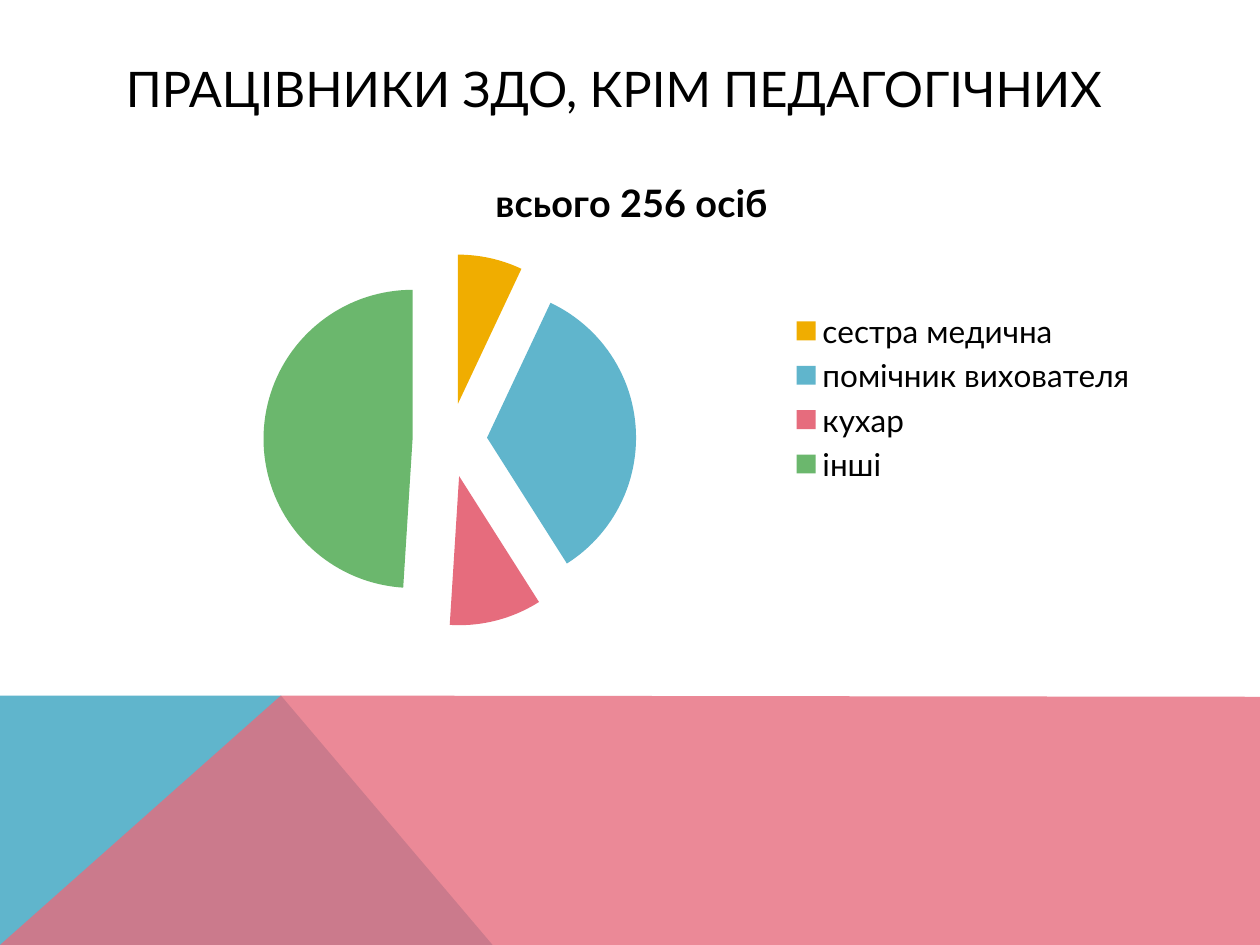
from dataclasses import dataclass

from lxml import etree
from pptx import Presentation
from pptx.chart.data import CategoryChartData
from pptx.dml.color import RGBColor
from pptx.enum.chart import XL_CHART_TYPE as ChartType, XL_LEGEND_POSITION as LegendPosition
from pptx.enum.text import MSO_ANCHOR as Anchor, PP_ALIGN as Align
from pptx.oxml.ns import qn
from pptx.util import Inches, Pt

FONT = "Lato"
BLACK = RGBColor(0x00, 0x00, 0x00)
AMBER = RGBColor(0xF0, 0xAD, 0x00)
BLUE = RGBColor(0x60, 0xB5, 0xCC)
ROSE = RGBColor(0xE6, 0x6C, 0x7D)
GREEN = RGBColor(0x6B, 0xB7, 0x6D)

WIDTH, HEIGHT = 10, 7.5
BAND_TOP, PEAK = 5.52, 2.23
EXPLOSION = 25


@dataclass(frozen=True)
class Band:
    points: tuple[tuple[float, float], ...]
    color: RGBColor
    opacity: int = 100


@dataclass(frozen=True)
class Slice:
    label: str
    value: int
    color: RGBColor


BANDS = (
    Band(((0, HEIGHT), (0, BAND_TOP), (PEAK, BAND_TOP), (3.91, HEIGHT)), BLUE),
    Band(((0, HEIGHT), (PEAK, BAND_TOP), (WIDTH, 5.53), (WIDTH, HEIGHT)), ROSE, 80),
)
SLICES = (
    Slice("сестра медична", 7, AMBER),
    Slice("помічник вихователя", 34, BLUE),
    Slice("кухар", 10, ROSE),
    Slice("інші", 49, GREEN),
)


def draw_band(slide, band: Band) -> None:
    start, *rest = [(Inches(x), Inches(y)) for x, y in band.points]
    builder = slide.shapes.build_freeform(*start)
    builder.add_line_segments(rest, close=True)
    shape = builder.convert_to_shape()
    shape.shadow.inherit = False
    shape.line.fill.background()
    shape.fill.solid()
    shape.fill.fore_color.rgb = band.color
    if band.opacity < 100:
        color = shape.fill._xPr.find(f".//{qn('a:srgbClr')}")
        etree.SubElement(color, qn("a:alpha"), val=str(band.opacity * 1000))


def style_font(font, size: float, bold: bool = False) -> None:
    font.name, font.size, font.bold = FONT, Pt(size), bold
    font.color.rgb = BLACK


def write_text(frame, text: str, *, size: float, bold: bool = False,
               align: Align = Align.LEFT) -> None:
    paragraph = frame.paragraphs[0]
    paragraph.alignment = align
    run = paragraph.add_run()
    run.text = text
    style_font(run.font, size, bold)


def draw_title(slide, text: str) -> None:
    box = slide.shapes.add_textbox(Inches(0.9), Inches(0.4), Inches(8.22), Inches(0.6))
    frame = box.text_frame
    frame.word_wrap = True
    frame.vertical_anchor = Anchor.MIDDLE
    write_text(frame, text, size=28)


def draw_pie(slide, title: str, slices: tuple[Slice, ...]) -> None:
    data = CategoryChartData()
    data.categories = [item.label for item in slices]
    data.add_series(title, [item.value for item in slices])
    chart = slide.shapes.add_chart(
        ChartType.PIE, Inches(0.9), Inches(1.2), Inches(8.23), Inches(3.91), data
    ).chart
    style_font(chart.font, 18)

    chart.has_title = True
    write_text(chart.chart_title.text_frame, title, size=21.6, bold=True, align=Align.CENTER)
    chart.chart_title.include_in_layout = False
    chart.has_legend = True
    chart.legend.position = LegendPosition.RIGHT
    chart.legend.include_in_layout = False
    style_font(chart.legend.font, 18)

    # Slice colours and the gap between slices
    plot = chart.plots[0]
    plot.vary_by_categories = True
    series = plot.series[0]
    for index, item in enumerate(slices):
        fill = series.points[index].format.fill
        fill.solid()
        fill.fore_color.rgb = item.color
    for point in series._element.findall(qn("c:dPt")):
        explosion = etree.Element(qn("c:explosion"), val=str(EXPLOSION))
        point.find(qn("c:spPr")).addprevious(explosion)


def main() -> None:
    presentation = Presentation()
    presentation.slide_width, presentation.slide_height = Inches(WIDTH), Inches(HEIGHT)
    slide = presentation.slides.add_slide(presentation.slide_layouts[6])

    # Coloured bands at the foot
    for band in BANDS:
        draw_band(slide, band)

    # Heading and staff chart
    draw_title(slide, "ПРАЦІВНИКИ ЗДО, КРІМ ПЕДАГОГІЧНИХ")
    draw_pie(slide, "всього 256 осіб", SLICES)

    presentation.save("out.pptx")


if __name__ == "__main__":
    main()
